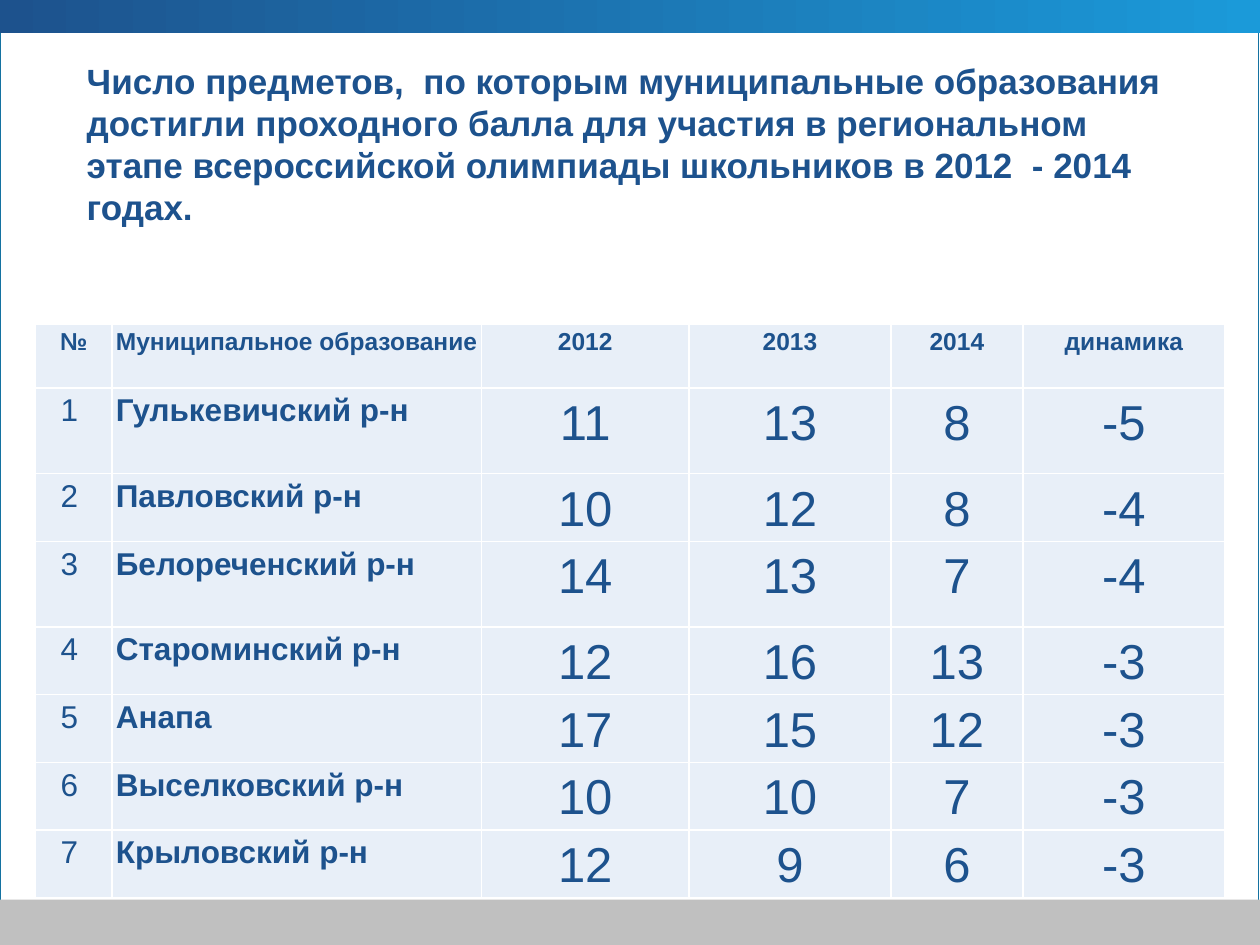
from lxml import etree
from pptx import Presentation
from pptx.dml.color import RGBColor
from pptx.enum.shapes import MSO_SHAPE
from pptx.enum.text import MSO_ANCHOR, PP_ALIGN
from pptx.oxml.ns import qn
from pptx.util import Inches, Pt

RECTANGLE = MSO_SHAPE.RECTANGLE
MIDDLE = MSO_ANCHOR.MIDDLE
LEFT, CENTER = PP_ALIGN.LEFT, PP_ALIGN.CENTER

NAVY = RGBColor(0x1D, 0x52, 0x8D)
SKY = RGBColor(0x1B, 0x9A, 0xD9)
TEAL = RGBColor(0x14, 0x72, 0xA1)
GRAY = RGBColor(0xC0, 0xC0, 0xC0)
PALE = RGBColor(0xE8, 0xEF, 0xF8)
WHITE = RGBColor(0xFF, 0xFF, 0xFF)

HEADING = (
    "Число предметов,  по которым муниципальные образования достигли "
    "проходного балла для участия в региональном этапе всероссийской "
    "олимпиады школьников в 2012  - 2014 годах."
)
HEADERS = ["№", "Муниципальное образование", "2012", "2013", "2014", "динамика"]
DISTRICTS = [
    ("Гулькевичский р-н", 11, 13, 8, -5),
    ("Павловский р-н", 10, 12, 8, -4),
    ("Белореченский р-н", 14, 13, 7, -4),
    ("Староминский р-н", 12, 16, 13, -3),
    ("Анапа", 17, 15, 12, -3),
    ("Выселковский р-н", 10, 10, 7, -3),
    ("Крыловский р-н", 12, 9, 6, -3),
]
COLUMN_WIDTHS = [0.61, 2.93, 1.65, 1.6, 1.05, 1.6]
ROW_HEIGHT, TALL_ROW_HEIGHT = 0.51, 0.68
TALL_ROWS = (1, 3)

# Formats of the table columns below the header
NUMBER = {"size": 18, "right": 0.1}
DISTRICT = {"size": 18, "bold": True, "align": LEFT}
RESULT = {"size": 28}


def write(frame, text, size, bold=False, align=CENTER, spacing=1.15):
    paragraph = frame.paragraphs[0]
    paragraph.alignment = align
    paragraph.line_spacing = spacing
    run = paragraph.add_run()
    run.text = text
    run.font.name = "Arial"
    run.font.size = Pt(size)
    run.font.bold = bold
    run.font.color.rgb = NAVY


class SlideBuilder:
    def __init__(self, slide):
        self.slide = slide

    def rectangle(self, left, top, width, height, fill=None, gradient=None, line=None):
        shape = self.slide.shapes.add_shape(
            RECTANGLE, Inches(left), Inches(top), Inches(width), Inches(height))
        shape.shadow.inherit = False
        if gradient:
            shape.fill.gradient()
            shape.fill.gradient_angle = 0
            for stop, color in zip(shape.fill.gradient_stops, gradient):
                stop.color.rgb = color
        elif fill is not None:
            shape.fill.solid()
            shape.fill.fore_color.rgb = fill
        else:
            shape.fill.background()
        if line is not None:
            shape.line.color.rgb = line
            shape.line.width = Pt(0.25)
        else:
            shape.line.fill.background()

    def heading(self, text, left, top, width, height):
        box = self.slide.shapes.add_textbox(
            Inches(left), Inches(top), Inches(width), Inches(height))
        frame = box.text_frame
        frame.word_wrap = True
        frame.vertical_anchor = MIDDLE
        frame.margin_bottom = Inches(0.38)
        write(frame, text, size=20, bold=True, align=LEFT, spacing=Pt(24))

    def table(self, left, top, widths, heights):
        frame = self.slide.shapes.add_table(
            len(heights), len(widths), Inches(left), Inches(top),
            Inches(sum(widths)), Inches(sum(heights)))
        grid = frame.table
        grid.first_row = grid.horz_banding = False
        for column, width in zip(grid.columns, widths):
            column.width = Inches(width)
        for row, height in zip(grid.rows, heights):
            row.height = Inches(height)
        return grid

    def cell(self, cell, text, right=0.03, **text_format):
        cell.margin_left, cell.margin_right = Inches(0.03), Inches(right)
        cell.margin_top = cell.margin_bottom = 0
        properties = cell._tc.get_or_add_tcPr()
        for side in ("a:lnL", "a:lnR", "a:lnT", "a:lnB"):
            border = etree.SubElement(properties, qn(side), w=str(Pt(1)))
            color = etree.SubElement(border, qn("a:solidFill"))
            etree.SubElement(color, qn("a:srgbClr"), val=str(WHITE))
        cell.fill.solid()
        cell.fill.fore_color.rgb = PALE
        write(cell.text_frame, text, **text_format)


def main():
    presentation = Presentation()
    presentation.slide_width, presentation.slide_height = Inches(10), Inches(7.5)
    slide = presentation.slides.add_slide(presentation.slide_layouts[6])
    slide.background.fill.solid()
    slide.background.fill.fore_color.rgb = WHITE
    builder = SlideBuilder(slide)

    # Frame and bands
    builder.rectangle(0, 0, 9.99, 7.5, line=TEAL)
    builder.rectangle(0, 7.14, 10, 0.36, fill=GRAY)
    builder.rectangle(0, 0, 10, 0.26, gradient=(NAVY, SKY))

    # Heading
    builder.heading(HEADING, 0.59, 0.44, 8.84, 1.73)

    # Results by district
    heights = [TALL_ROW_HEIGHT if row in TALL_ROWS else ROW_HEIGHT
               for row in range(len(DISTRICTS) + 1)]
    results = builder.table(0.28, 2.57, COLUMN_WIDTHS, heights)
    for column, header in enumerate(HEADERS):
        builder.cell(results.cell(0, column), header, size=14, bold=True)
    column_formats = [NUMBER, DISTRICT] + [RESULT] * 4
    for number, district in enumerate(DISTRICTS, start=1):
        for column, value in enumerate((number, *district)):
            builder.cell(results.cell(number, column), str(value), **column_formats[column])

    presentation.save("out.pptx")


if __name__ == "__main__":
    main()
